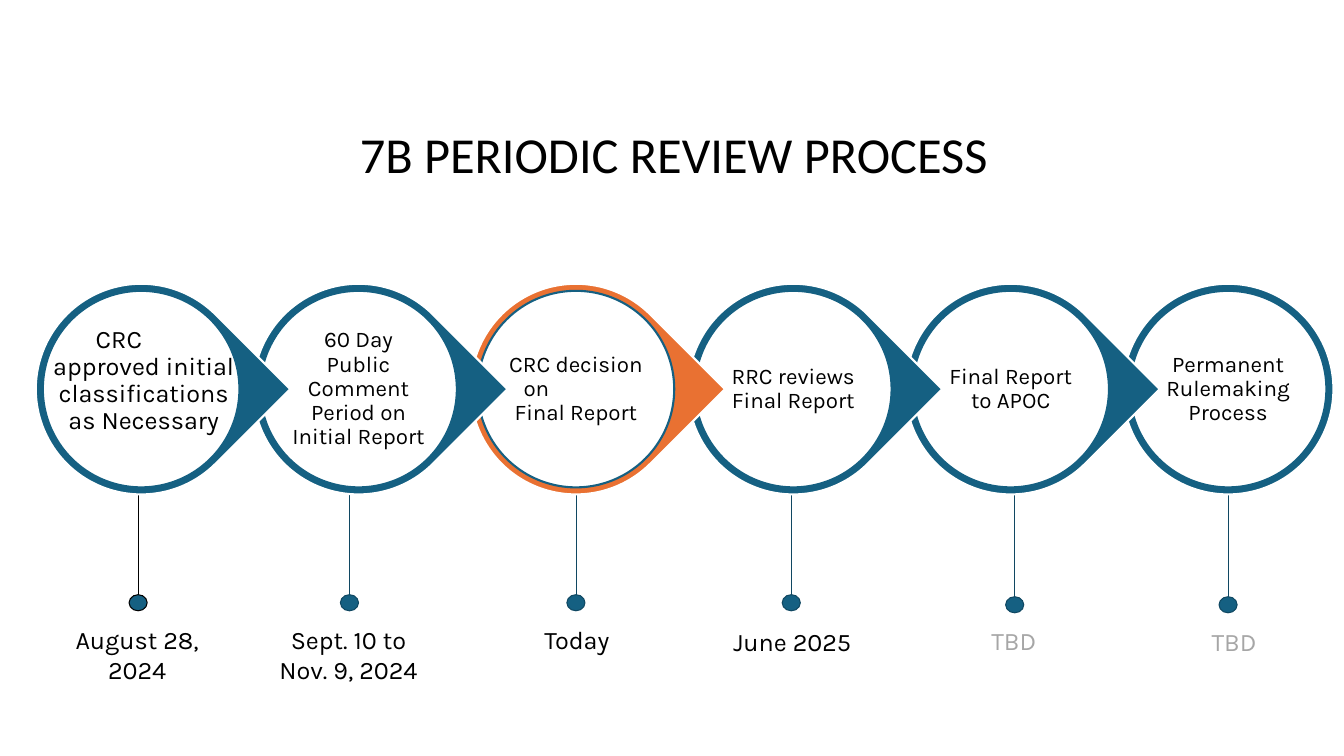
from dataclasses import dataclass

from lxml.etree import SubElement
from pptx import Presentation
from pptx.dml.color import RGBColor
from pptx.enum.shapes import MSO_CONNECTOR, MSO_SHAPE
from pptx.enum.text import MSO_ANCHOR, PP_ALIGN
from pptx.oxml.ns import qn
from pptx.util import Inches, Pt

# Content: a label is a list of (line, left indent), None means centred
TITLE = "7B PERIODIC REVIEW PROCESS"
STEPS = [
    {"label": [("CRC", 0.45), ("approved initial classifications as Necessary", None)],
     "date": ["August 28, 2024"], "pin": -0.03, "mid": -0.04, "wide": 1.51,
     "line": "black"},
    {"label": [("60 Day Public Comment Period on Initial Report", None)],
     "date": ["Sept. 10 to", "Nov. 9, 2024"], "pin": -0.09, "mid": -0.1},
    {"label": [("CRC decision", None), ("on", 0.15), ("Final Report", None)],
     "date": ["Today"], "mid": 0.01, "fill": "orange"},
    {"label": [("RRC reviews Final Report", None)],
     "date": ["June 2025"], "pin": -0.02, "mid": -0.01, "drop": 0.02},
    {"label": [("Final Report to APOC", None)],
     "date": ["TBD"], "pin": 0.04, "mid": 0.03, "drop": 0.01, "low": 0.02,
     "ink": "grey"},
    {"label": [("Permanent Rulemaking Process", None)],
     "date": ["TBD"], "mid": 0.06, "drop": 0.02, "low": 0.02, "ink": "grey"},
]


@dataclass(frozen=True)
class Theme:
    blue: str = "156082"
    deep: str = "104862"
    orange: str = "E97132"
    grey: str = "A6A6A6"
    black: str = "000000"
    white: str = "FFFFFF"
    head: str = "Calibri"
    body: str = "Karla"
    title: int = 36
    date: int = 18
    label: int = 16


LOOK = Theme()

# Grid, in inches
WIDE, HIGH = 13.33, 7.5
LEFT, RIGHT = 1.4, 12.18
STEP = (RIGHT - LEFT) / (len(STEPS) - 1)
ROW = 3.86
RING, DISC = 2.09, 1.95
STEM, DOT, DATE = 4.31, 5.9, 6.14
DOT_W, DOT_H = 0.18, 0.16


def tint(name):
    return RGBColor.from_string(getattr(LOOK, name))


def apply(target, values):
    for name, value in values.items():
        setattr(target, name, value)


def shape(slide, kind, mid, top, wide, high, fill, line, weight):
    item = slide.shapes.add_shape(
        kind, *map(Inches, (mid - wide / 2, top, wide, high)))
    item.shadow.inherit = False
    item.fill.solid()
    item.fill.fore_color.rgb = tint(fill)
    item.line.color.rgb = tint(line)
    item.line.width = Pt(weight)
    return item


def box(slide, left, top, wide, high):
    return slide.shapes.add_textbox(*map(Inches, (left, top, wide, high)))


def write(item, lines, size, font, ink="black", align=PP_ALIGN.CENTER, lead=1.0):
    frame = item.text_frame
    frame.word_wrap = True
    for i, (text, indent) in enumerate(lines):
        para = frame.paragraphs[0] if i == 0 else frame.add_paragraph()
        apply(para, {"alignment": align, "line_spacing": lead,
                     "space_after": Pt(0)})
        if indent is not None:
            para.alignment = PP_ALIGN.LEFT
            para._p.get_or_add_pPr().set("marL", str(Inches(indent)))
        run = para.add_run()
        run.text = text
        apply(run.font, {"size": Pt(size), "name": font})
        run.font.color.rgb = tint(ink)


def draw_pin(slide, mid, step):
    x, low = mid + step.get("pin", 0), step.get("low", 0)
    line = step.get("line", "deep")
    dot = shape(slide, MSO_SHAPE.OVAL, x, DOT + low, DOT_W, DOT_H, "blue", line, 0)
    stem = slide.shapes.add_connector(
        MSO_CONNECTOR.STRAIGHT, *map(Inches, (x, STEM + low, x, DOT + low)))
    stem.end_connect(dot, 0)
    stem.line.color.rgb = tint(line)
    stem.line.width = Pt(0.5)
    SubElement(stem._element.spPr, qn("a:effectLst"))


def draw_ring(slide, mid, step, last):
    kind = MSO_SHAPE.OVAL if last else MSO_SHAPE.TEAR
    ring = shape(slide, kind, mid, ROW - RING / 2, RING, RING,
                 step.get("fill", "blue"), "white", 1.5)
    ring.rotation = 0 if last else 45
    return shape(slide, MSO_SHAPE.OVAL, mid, ROW - DISC / 2, DISC, DISC,
                 "white", "blue", 1.5)


def main():
    deck = Presentation()
    apply(deck, {"slide_width": Inches(WIDE), "slide_height": Inches(HIGH)})
    slide = deck.slides.add_slide(deck.slide_layouts[6])
    mids = [LEFT + i * STEP for i in range(len(STEPS))]
    cols = list(zip(mids, STEPS))

    # Pins
    for mid, step in cols:
        draw_pin(slide, mid, step)

    # Title
    write(box(slide, 3.47, 1.17, 6.94, 0.71), [(TITLE, None)],
          LOOK.title, LOOK.head, align=PP_ALIGN.LEFT)

    # Rings overlap, so the last one goes to the back
    for i, (mid, step) in reversed(list(enumerate(cols))):
        disc = draw_ring(slide, mid, step, i == len(cols) - 1)
        if i == 0:
            continue
        edge = Inches(0.02)
        apply(disc.text_frame, {
            "margin_left": edge, "margin_right": edge, "margin_top": edge,
            "margin_bottom": edge, "vertical_anchor": MSO_ANCHOR.MIDDLE})
        write(disc, step["label"], LOOK.label, LOOK.body, lead=0.9)

    # The first label is larger than its disc allows
    write(box(slide, 0.4, 3.19, 2.05, 1.19), STEPS[0]["label"],
          LOOK.date, LOOK.body, lead=0.9)

    # Dates
    for mid, step in cols:
        wide = step.get("wide", 2.08)
        date = box(slide, mid + step["mid"] - wide / 2,
                   DATE + step.get("drop", 0), wide, 0.4)
        write(date, [(text, None) for text in step["date"]],
              LOOK.date, LOOK.body, step.get("ink", "black"))

    deck.save("out.pptx")


if __name__ == "__main__":
    main()
